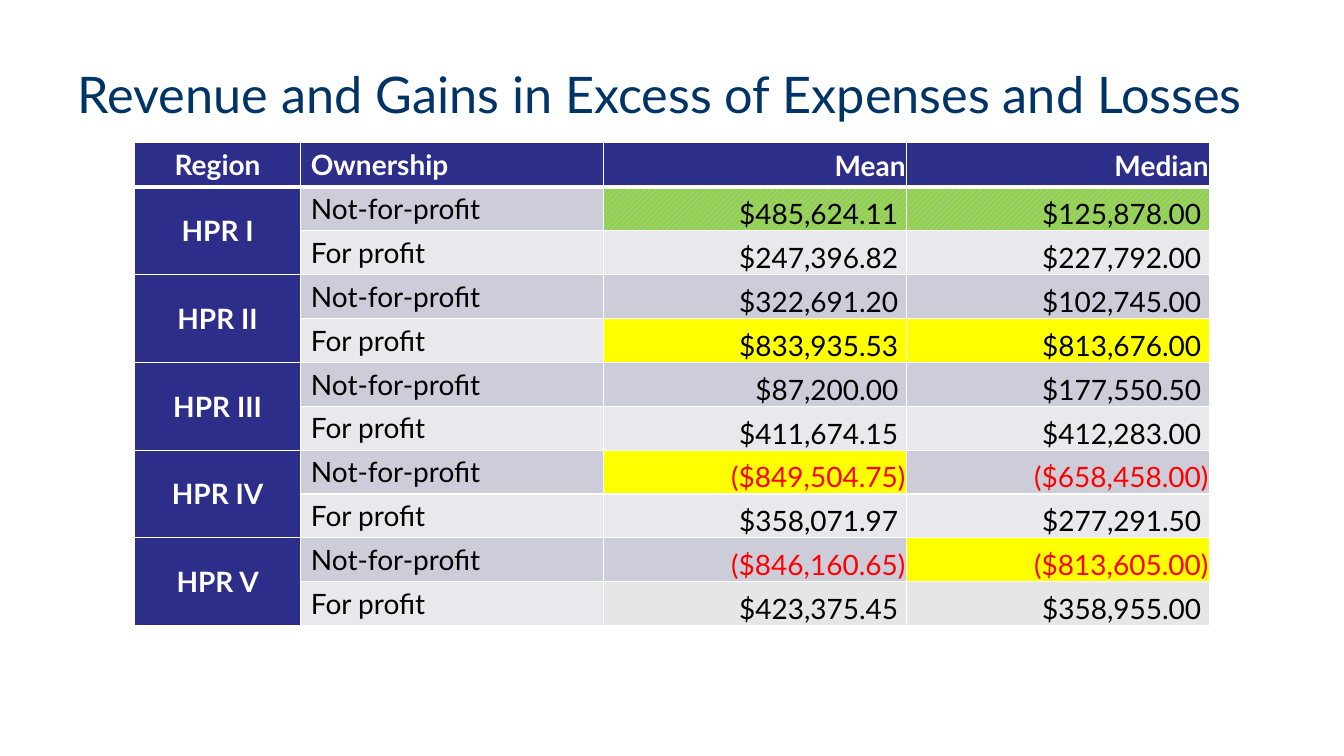
import pptx
import pptx.dml.color
import pptx.enum.dml
import pptx.enum.text
import pptx.oxml
import pptx.oxml.ns
import pptx.util

Cm = pptx.util.Cm
Pt = pptx.util.Pt
RGBColor = pptx.dml.color.RGBColor
Align = pptx.enum.text.PP_ALIGN
Anchor = pptx.enum.text.MSO_ANCHOR

NAVY = RGBColor(0x00, 0x33, 0x66)
INDIGO = RGBColor(0x2D, 0x2D, 0x8A)
WHITE = RGBColor(0xFF, 0xFF, 0xFF)
BLACK = RGBColor(0x00, 0x00, 0x00)
RED = RGBColor(0xFF, 0x00, 0x00)
YELLOW = RGBColor(0xFF, 0xFF, 0x00)
GREEN = RGBColor(0x92, 0xD0, 0x50)
DARK_BAND = RGBColor(0xCD, 0xCD, 0xDA)
LIGHT_BAND = RGBColor(0xE8, 0xE8, 0xED)
GRAY = RGBColor(0xE6, 0xE6, 0xE6)

FONT = "Lato"
HEADERS = ["Region", "Ownership", "Mean", "Median"]
OWNERSHIP = ["Not-for-profit", "For profit"]
REGIONS = {
    "HPR I": [(485624.11, 125878.00), (247396.82, 227792.00)],
    "HPR II": [(322691.20, 102745.00), (833935.53, 813676.00)],
    "HPR III": [(87200.00, 177550.50), (411674.15, 412283.00)],
    "HPR IV": [(-849504.75, -658458.00), (358071.97, 277291.50)],
    "HPR V": [(-846160.65, -813605.00), (423375.45, 358955.00)],
}
HATCHED = {(1, 2), (1, 3)}
HIGHLIGHTS = {
    (4, 2): YELLOW, (4, 3): YELLOW, (7, 2): YELLOW, (9, 3): YELLOW,
    (10, 2): GRAY, (10, 3): GRAY,
}


def add_span(para, text, size, color, bold=False):
    """Add one formatted run to a paragraph."""
    span = para.add_run()
    span.text = text
    span.font.name = FONT
    span.font.size = Pt(size)
    span.font.bold = bold
    span.font.color.rgb = color


def money(value):
    """Format dollars in accounting style, losses in parentheses."""
    return f"(${-value:,.2f})" if value < 0 else f"${value:,.2f} "


def set_borders(cell, bottom_width):
    """Give a cell white borders, with its own width at the bottom."""
    properties = cell._tc.get_or_add_tcPr()
    for side, width in (("L", 1), ("R", 1), ("T", 1), ("B", bottom_width)):
        properties.append(pptx.oxml.parse_xml(
            f'<a:ln{side} {pptx.oxml.ns.nsdecls("a")} w="{Pt(width)}">'
            f'<a:solidFill><a:srgbClr val="{WHITE}"/></a:solidFill></a:ln{side}>'
        ))


def style_cell(cell, row, column):
    """Set the borders and fill that belong to a table position."""
    set_borders(cell, 3 if row == 0 else 1)
    if (row, column) in HATCHED:
        cell.fill.patterned()
        cell.fill.pattern = pptx.enum.dml.MSO_PATTERN.WIDE_UPWARD_DIAGONAL
        cell.fill.fore_color.rgb = DARK_BAND
        cell.fill.back_color.rgb = GREEN
        return
    band = DARK_BAND if row % 2 else LIGHT_BAND
    base = INDIGO if row == 0 or column == 0 else band
    cell.fill.solid()
    cell.fill.fore_color.rgb = HIGHLIGHTS.get((row, column), base)


def write_cell(cell, text, column, color, bold, anchor):
    """Write a cell, aligned and inset as its column requires."""
    cell.vertical_anchor = anchor
    if column >= 2:
        cell.margin_left = cell.margin_right = cell.margin_top = Cm(0.03)
        cell.margin_bottom = 0
    para = cell.text_frame.paragraphs[0]
    para.alignment = (Align.CENTER, Align.LEFT, Align.RIGHT, Align.RIGHT)[column]
    add_span(para, text, 20, color, bold)


def add_title(page, left, top, width, height):
    """Place and fill the title placeholder."""
    box = page.shapes.title
    box.left, box.top, box.width, box.height = left, top, width, height
    frame = box.text_frame
    frame.auto_size = pptx.enum.text.MSO_AUTO_SIZE.NONE
    frame.vertical_anchor = Anchor.MIDDLE
    para = frame.paragraphs[0]
    para.alignment = Align.LEFT
    add_span(para, "Revenue and Gains in Excess of Expenses and Losses", 36, NAVY)


def add_results_table(page, left, top, width, height):
    """Build the table of mean and median results by region and ownership."""
    row_count = 1 + len(REGIONS) * len(OWNERSHIP)
    table = page.shapes.add_table(
        row_count, len(HEADERS), left, top, width, height).table
    region_width = Cm(4.19)
    for index, column in enumerate(table.columns):
        column.width = (width - region_width) // 3 if index else region_width
    for row in table.rows:
        row.height = height // row_count
    for row in range(row_count):
        for column in range(len(HEADERS)):
            style_cell(table.cell(row, column), row, column)

    for column, header in enumerate(HEADERS):
        anchor = Anchor.TOP if column == 1 else Anchor.MIDDLE
        write_cell(table.cell(0, column), header, column, WHITE, True, anchor)
    for index, (region, results) in enumerate(REGIONS.items()):
        first = 1 + index * len(OWNERSHIP)
        region_cell = table.cell(first, 0)
        region_cell.merge(table.cell(first + len(OWNERSHIP) - 1, 0))
        write_cell(region_cell, region, 0, WHITE, True, Anchor.MIDDLE)
        for row, (owner, values) in enumerate(zip(OWNERSHIP, results), first):
            write_cell(table.cell(row, 1), owner, 1, BLACK, False, Anchor.TOP)
            for column, value in enumerate(values, 2):
                color = RED if value < 0 else BLACK
                write_cell(table.cell(row, column), money(value), column,
                           color, False, Anchor.BOTTOM)


def main():
    """Build and save the deck."""
    deck = pptx.Presentation()
    deck.slide_width, deck.slide_height = Cm(33.87), Cm(19.05)
    page = deck.slides.add_slide(deck.slide_layouts.get_by_name("Title Only"))
    add_title(page, Cm(1.7), Cm(0.76), Cm(30.48), Cm(3.18))
    add_results_table(page, Cm(3.39), Cm(3.6), Cm(27.1), Cm(12.12))
    deck.save("out.pptx")


if __name__ == "__main__":
    main()
